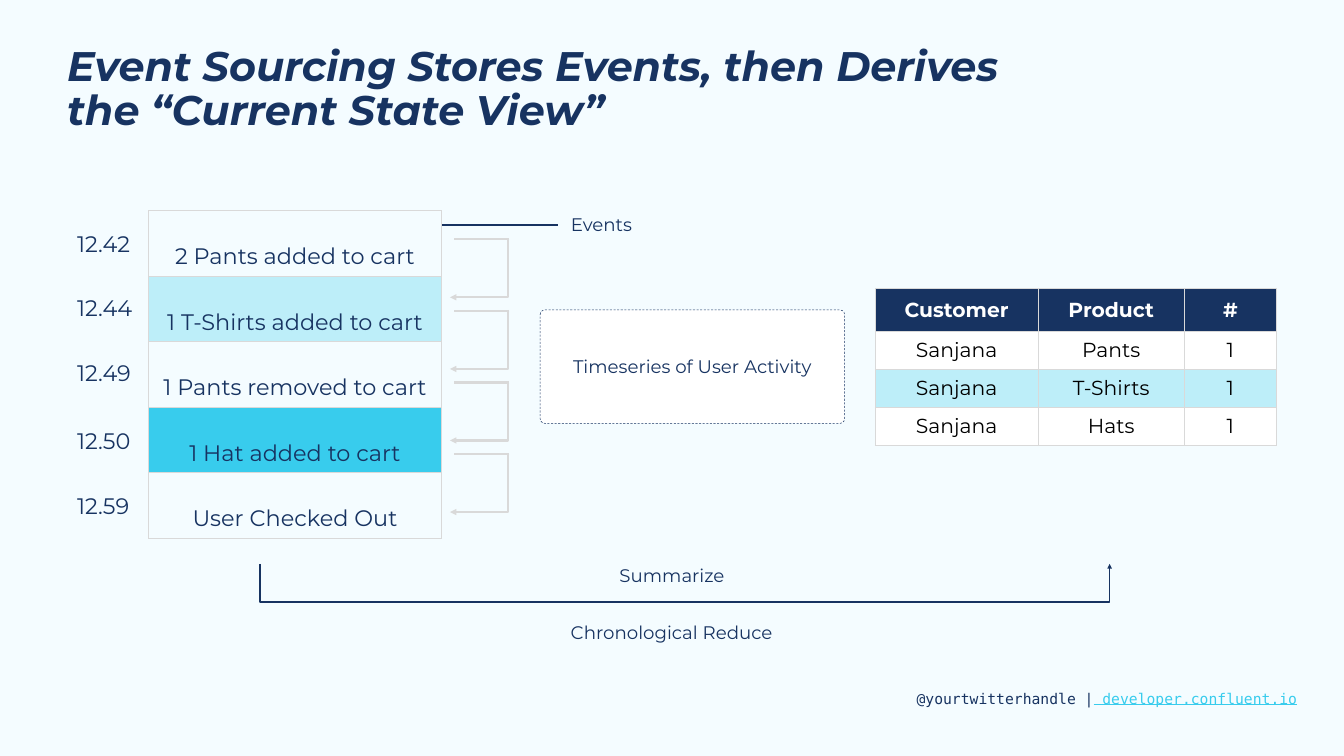
from lxml.etree import SubElement
from pptx import Presentation
from pptx.dml.color import RGBColor
from pptx.enum.dml import MSO_LINE
from pptx.enum.shapes import MSO_CONNECTOR, MSO_SHAPE
from pptx.enum.text import MSO_ANCHOR, MSO_AUTO_SIZE, PP_ALIGN
from pptx.oxml import parse_xml
from pptx.oxml.ns import nsdecls, qn
from pptx.util import Inches, Pt

COLORS = {"page": "F4FCFF", "navy": "173361", "cyan": "38CCED",
          "grey": "D9D9D9", "white": "FFFFFF", "black": "000000"}
RGB = {name: RGBColor.from_string(value) for name, value in COLORS.items()}


def add_run(paragraph, text, size, color="navy", bold=False, face="Montserrat"):
    run = paragraph.add_run()
    run.text = text
    run.font.name = face
    run.font.size = Pt(size)
    run.font.bold = bold
    run.font.color.rgb = RGB[color]
    return run


def style_cell(cell, fill, margins):
    cell.margin_left, cell.margin_top, cell.margin_right, cell.margin_bottom = map(Inches, margins)
    cell.vertical_anchor = MSO_ANCHOR.MIDDLE
    properties = cell._tc.get_or_add_tcPr()
    if fill is None:
        cell.fill.background()
    else:
        cell.fill.solid()
        cell.fill.fore_color.rgb = RGB["cyan" if fill == "tint" else fill]
    if fill == "tint":
        SubElement(properties.find(".//" + qn("a:srgbClr")), qn("a:alpha"), val="29000")
    for index, side in enumerate(("lnL", "lnR", "lnT", "lnB")):
        properties.insert(index, parse_xml(
            f'<a:{side} {nsdecls("a")} w="{Pt(1.5)}"><a:solidFill>'
            f'<a:srgbClr val="{COLORS["grey"]}"/></a:solidFill></a:{side}>'))


prs = Presentation()
prs.slide_width, prs.slide_height = Inches(26.67), Inches(15)
slide = prs.slides.add_slide(prs.slide_layouts[5])
slide.background.fill.solid()
slide.background.fill.fore_color.rgb = RGB["page"]
shapes = slide.shapes

title = shapes.title
title.left, title.top, title.width, title.height = map(Inches, (1.33, 0.77, 22.68, 1.24))
title_frame = title.text_frame
title_frame.auto_size = MSO_AUTO_SIZE.NONE
title_frame.vertical_anchor = MSO_ANCHOR.TOP
title_frame.margin_left, title_frame.margin_right = 0, Inches(0.27)
title_frame.margin_top = title_frame.margin_bottom = Inches(0.13)
for index, text in enumerate(("Event Sourcing Stores Events, then Derives",
                              "the “Current State View”")):
    line = title_frame.add_paragraph() if index else title_frame.paragraphs[0]
    line.alignment = PP_ALIGN.LEFT
    line.line_spacing = 0.9
    line.space_before = Pt(0)
    add_run(line, text, 59, bold=True).font.italic = True

cart_rows = [("Customer", "Product", "#"), ("Sanjana", "Pants", "1"),
             ("Sanjana", "T-Shirts", "1"), ("Sanjana", "Hats", "1")]
cart_fills = ["navy", "white", "tint", "white"]
cart = shapes.add_table(4, 3, Inches(17.37), Inches(5.73), Inches(7.96), Inches(3.1)).table
cart.horz_banding = False
for column, width in zip(cart.columns, (3.23, 2.9, 1.83)):
    column.width = Inches(width)
for r, (row, fill) in enumerate(zip(cart_rows, cart_fills)):
    cart.rows[r].height = Inches(0.75 if r else 0.85)
    for c, text in enumerate(row):
        cell = cart.cell(r, c)
        style_cell(cell, fill, (0.27, 0.13, 0.27, 0.13))
        entry = cell.text_frame.paragraphs[0]
        entry.alignment = PP_ALIGN.CENTER
        add_run(entry, text, 29, "black" if r else "white", bold=r == 0)

activity = shapes.add_shape(MSO_SHAPE.ROUNDED_RECTANGLE, Inches(10.72), Inches(6.15),
                            Inches(6.04), Inches(2.25))
activity.adjustments[0] = 0.04
activity.shadow.inherit = False
activity.fill.solid()
activity.fill.fore_color.rgb = RGB["white"]
activity.line.color.rgb = RGB["navy"]
activity.line.width = Pt(0.75)
activity.line.dash_style = MSO_LINE.DASH
activity_frame = activity.text_frame
activity_frame.word_wrap = True
activity_frame.vertical_anchor = MSO_ANCHOR.MIDDLE
activity_frame.margin_left = activity_frame.margin_right = Inches(0.27)
activity_frame.paragraphs[0].alignment = PP_ALIGN.CENTER
add_run(activity_frame.paragraphs[0], "Timeseries of User Activity", 26)

for text, top in (("12.42", 4.46), ("12.44", 5.73), ("12.49", 7.02),
                  ("12.50", 8.37), ("12.59", 9.67)):
    time_frame = shapes.add_textbox(Inches(1.33), Inches(top), Inches(1.63), Inches(0.74)).text_frame
    time_frame.word_wrap = True
    time_frame.vertical_anchor = MSO_ANCHOR.MIDDLE
    time_frame.margin_left = time_frame.margin_right = Inches(0.2)
    time_frame.margin_top = time_frame.margin_bottom = Inches(0.1)
    add_run(time_frame.paragraphs[0], text, 32)

events = [("2 Pants added to cart", None), ("1 T-Shirts added to cart", "tint"),
          ("1 Pants removed to cart", None), ("1 Hat added to cart", "cyan"),
          ("User Checked Out", None)]
log = shapes.add_table(5, 3, Inches(2.95), Inches(4.18), Inches(5.81), Inches(6.5)).table
log.first_row = log.horz_banding = False
for column, width in zip(log.columns, (2.21, 2.66, 0.94)):
    column.width = Inches(width)
for r, (text, fill) in enumerate(events):
    log.rows[r].height = Inches(1.3)
    for c in range(3):
        style_cell(log.cell(r, c), fill, (0.13, 0.33, 0.13, 0.07))
    log.cell(r, 0).merge(log.cell(r, 2))
    event = log.cell(r, 0).text_frame.paragraphs[0]
    event.alignment = PP_ALIGN.CENTER
    event.line_spacing = 1.5
    add_run(event, text, 32)

arrows = [([(5.16, 11.19), (5.16, 11.95), (22.02, 11.95), (22.02, 11.19)], "navy", 2.25)]
lines = [(11.07, 8.77, 4.46, "navy")]
for step in range(4):
    top = 4.73 + 1.42 * step
    arrows.append(([(10.09, top), (10.09, top + 1.17), (8.93, top + 1.17)], "grey", 3))
    lines.append((10.11, 9, top + 0.02, "grey"))

for points, color, weight in arrows:
    corners = [(Inches(x), Inches(y)) for x, y in points]
    builder = shapes.build_freeform(*corners[0])
    builder.add_line_segments(corners[1:], close=False)
    arrow = builder.convert_to_shape()
    arrow.shadow.inherit = False
    arrow.fill.background()
    arrow.line.color.rgb = RGB[color]
    arrow.line.width = Pt(weight)
    SubElement(arrow.line._get_or_add_ln(), qn("a:tailEnd"), type="triangle")

for start, end, y, color in lines:
    stroke = shapes.add_connector(MSO_CONNECTOR.STRAIGHT, Inches(start), Inches(y),
                                  Inches(end), Inches(y))
    stroke.line.color.rgb = RGB[color]
    stroke.line.width = Pt(3)
    SubElement(stroke._element.spPr, qn("a:effectLst"))

for text, left, top, width in (("Summarize", 11.9, 11.19, 2.87),
                               ("Chronological Reduce", 9.65, 12.33, 7.36),
                               ("Events", 10.5, 4.23, 2.87)):
    label = shapes.add_textbox(Inches(left), Inches(top), Inches(width), Inches(0.44)).text_frame
    label.word_wrap = True
    label.margin_left = label.margin_right = label.margin_top = label.margin_bottom = 0
    label.paragraphs[0].alignment = PP_ALIGN.CENTER
    add_run(label.paragraphs[0], text, 26)

footer = shapes.add_textbox(Inches(18.09), Inches(13.58), Inches(7.83), Inches(0.56)).text_frame
footer.margin_top = footer.margin_bottom = Inches(0.1)
add_run(footer.paragraphs[0], "@yourtwitterhandle |", 21, face="DejaVu Sans Mono")
address = add_run(footer.paragraphs[0], " developer.confluent.io", 21, "cyan", face="DejaVu Sans Mono")
address.font.underline = True

prs.save("out.pptx")
